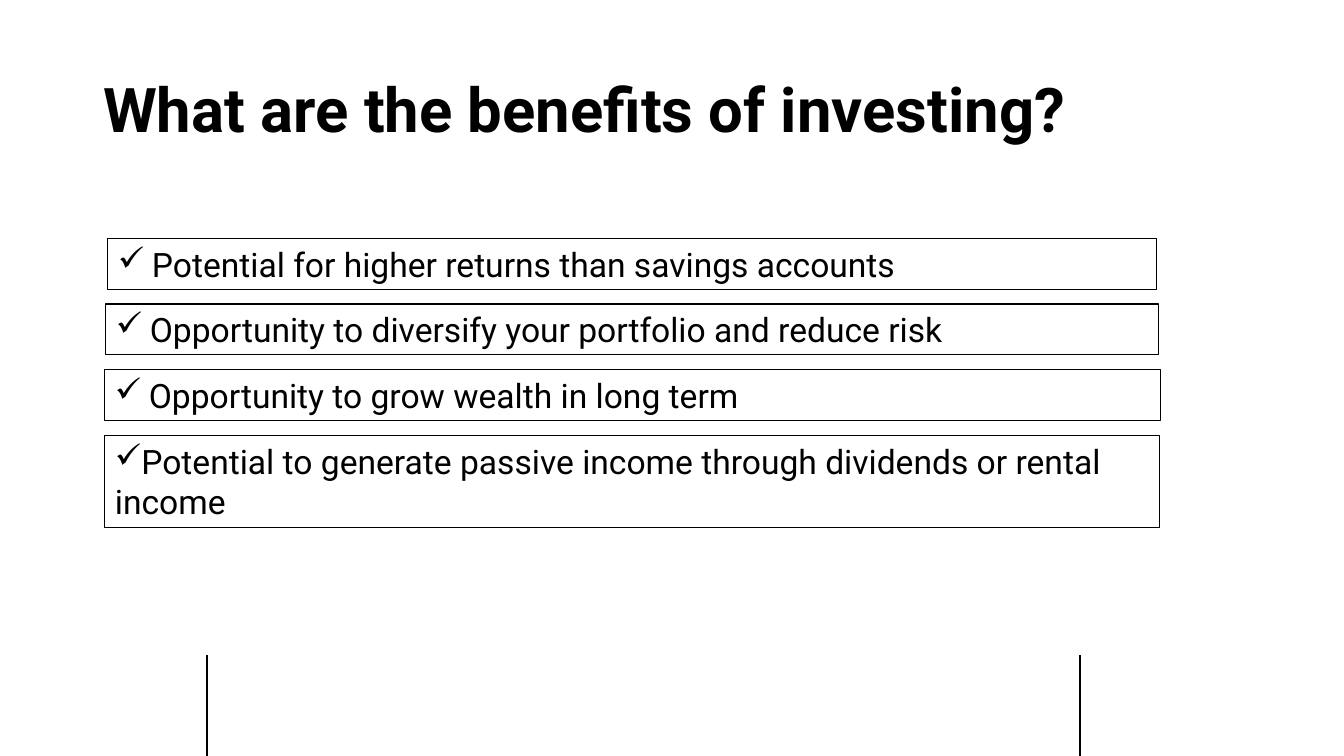
"""Build the slide on the benefits of investing."""
import lxml.etree
import pptx
import pptx.dml.color
import pptx.enum.shapes
import pptx.enum.text
import pptx.oxml.ns
import pptx.util

BLACK = pptx.dml.color.RGBColor(0, 0, 0)
WHITE = pptx.dml.color.RGBColor(255, 255, 255)
PX = 914400 / 100.8
PAGE_SIZE = (1344, 756)

TITLE = "What are the benefits of investing?"
TITLE_PLACE = (93, 40, 1159, 146)
BENEFITS = [
    ("Potential for higher returns than savings accounts", (108, 239, 1049, 51), 34),
    ("Opportunity to diversify your portfolio and reduce risk", (106, 304, 1053, 51), 34),
    ("Opportunity to grow wealth in long term", (105, 370, 1056, 51), 34),
    ("Potential to generate passive income through dividends or rental income",
     (105, 436, 1055, 92), 0),
]
RULES_X = (207, 1080)
RULES_TOP = 655

TITLE_FONT = {"name": "Roboto", "size": pptx.util.Pt(44), "bold": True}
BENEFIT_FONT = {"name": "Roboto", "size": pptx.util.Pt(24), "bold": False}


def emu(*lengths):
    return [round(length * PX) for length in lengths]


def format_font(font, values):
    for key, value in values.items():
        setattr(font, key, value)
    font.color.rgb = BLACK


def add_tick(para, hang):
    props = para._p.get_or_add_pPr()
    indent = emu(hang)[0]
    props.set("marL", str(indent))
    props.set("indent", str(-indent))
    bullet = lxml.etree.SubElement(props, pptx.oxml.ns.qn("a:buChar"))
    bullet.set("char", "✓")


def add_rule(page, x):
    rule = page.shapes.add_connector(
        pptx.enum.shapes.MSO_CONNECTOR.STRAIGHT, *emu(x, RULES_TOP, x, PAGE_SIZE[1]))
    rule.line.color.rgb = BLACK
    rule.line.width = pptx.util.Pt(1)
    lxml.etree.SubElement(rule._element.spPr, pptx.oxml.ns.qn("a:effectLst"))


def add_benefit(page, text, place, hang):
    box = page.shapes.add_shape(pptx.enum.shapes.MSO_SHAPE.RECTANGLE, *emu(*place))
    box.shadow.inherit = False
    box.fill.background()
    box.line.color.rgb = BLACK
    box.line.width = pptx.util.Pt(0.75)
    frame = box.text_frame
    frame.word_wrap = True
    frame.auto_size = pptx.enum.text.MSO_AUTO_SIZE.SHAPE_TO_FIT_TEXT
    frame.vertical_anchor = pptx.enum.text.MSO_ANCHOR.TOP
    para = frame.paragraphs[0]
    para.alignment = pptx.enum.text.PP_ALIGN.LEFT
    add_tick(para, hang)
    span = para.add_run()
    span.text = text
    format_font(span.font, BENEFIT_FONT)


def add_title(page):
    title = page.shapes.title
    title.left, title.top, title.width, title.height = emu(*TITLE_PLACE)
    frame = title.text_frame
    frame.word_wrap = True
    frame.auto_size = pptx.enum.text.MSO_AUTO_SIZE.NONE
    frame.vertical_anchor = pptx.enum.text.MSO_ANCHOR.MIDDLE
    para = frame.paragraphs[0]
    para.alignment = pptx.enum.text.PP_ALIGN.LEFT
    para.line_spacing = 0.9
    span = para.add_run()
    span.text = TITLE
    format_font(span.font, TITLE_FONT)


def main():
    deck = pptx.Presentation()
    deck.slide_width, deck.slide_height = emu(*PAGE_SIZE)
    page = deck.slides.add_slide(deck.slide_layouts.get_by_name("Title Only"))
    page.background.fill.solid()
    page.background.fill.fore_color.rgb = WHITE
    add_title(page)
    for x in RULES_X:
        add_rule(page, x)
    for text, place, hang in BENEFITS:
        add_benefit(page, text, place, hang)
    deck.save("out.pptx")


if __name__ == "__main__":
    main()
